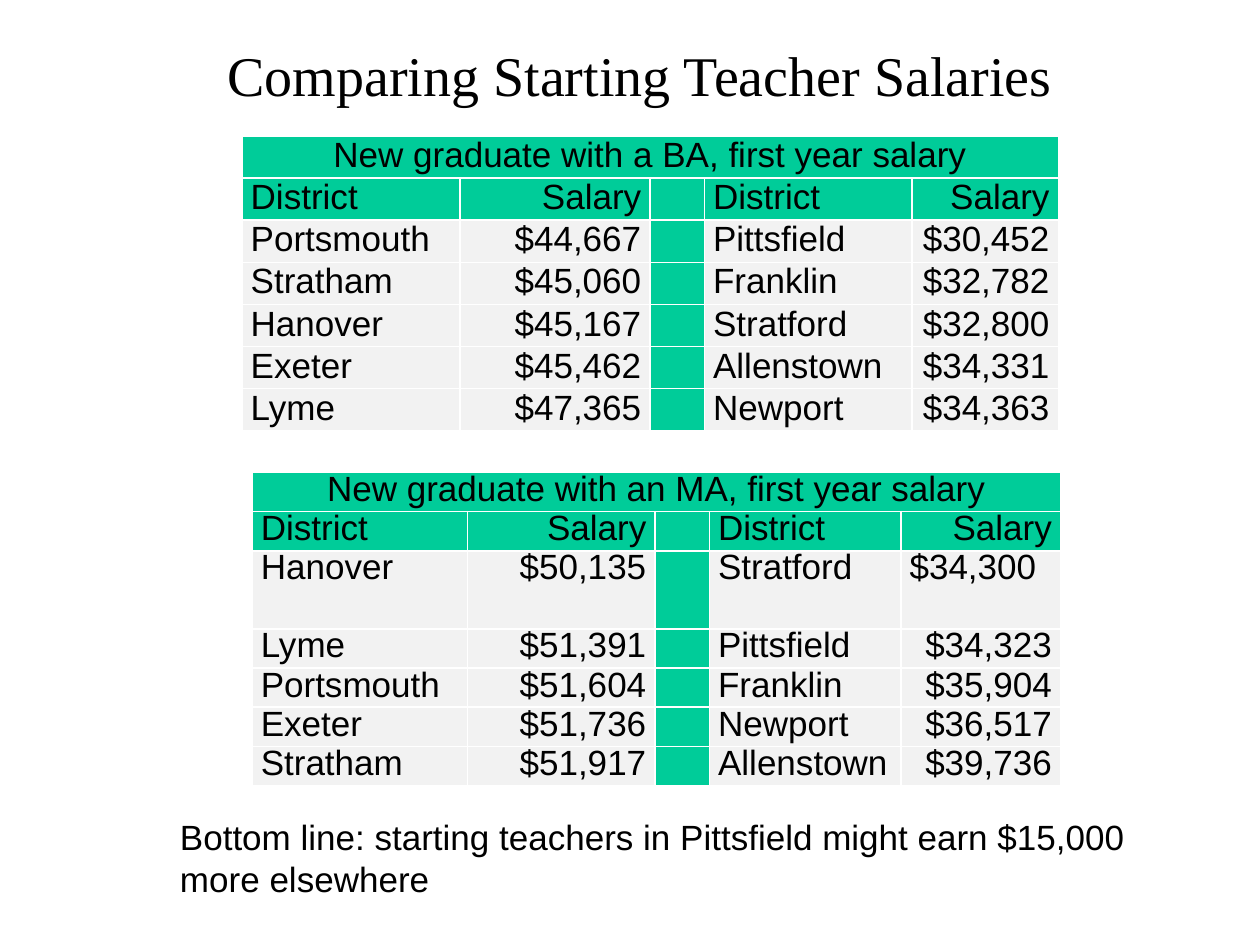
from lxml import etree
from pptx import Presentation
from pptx.dml.color import RGBColor
from pptx.enum import text
from pptx.oxml import ns
from pptx.util import Inches, Pt

COLORS = {"ink": "000000", "header": "00CC99", "body": "F2F2F2", "rule": "FFFFFF"}
LEFT, CENTER, RIGHT = text.PP_ALIGN.LEFT, text.PP_ALIGN.CENTER, text.PP_ALIGN.RIGHT
GUTTER = 2
HEADINGS = ("District", "Salary", "", "District", "Salary")

BA_ROWS = [
    ("Portsmouth", "$44,667", "", "Pittsfield", "$30,452"),
    ("Stratham", "$45,060", "", "Franklin", "$32,782"),
    ("Hanover", "$45,167", "", "Stratford", "$32,800"),
    ("Exeter", "$45,462", "", "Allenstown", "$34,331"),
    ("Lyme", "$47,365", "", "Newport", "$34,363"),
]
MA_ROWS = [
    ("Hanover", "$50,135", "", "Stratford", "$34,300"),
    ("Lyme", "$51,391", "", "Pittsfield", "$34,323"),
    ("Portsmouth", "$51,604", "", "Franklin", "$35,904"),
    ("Exeter", "$51,736", "", "Newport", "$36,517"),
    ("Stratham", "$51,917", "", "Allenstown", "$39,736"),
]


def write(tf, words, size=20, font="Arial", align=LEFT, spacing=None):
    p = tf.paragraphs[0]
    p.alignment = align
    p.line_spacing = spacing
    if words:
        r = p.add_run()
        r.text = words
        r.font.size = Pt(size)
        r.font.name = font
        r.font.color.rgb = RGBColor.from_string(COLORS["ink"])


def add_text(s, left, top, width, height, words, anchor=text.MSO_ANCHOR.TOP, **fmt):
    sp = s.shapes.add_textbox(Inches(left), Inches(top), Inches(width), Inches(height))
    tf = sp.text_frame
    tf.word_wrap = True
    tf.vertical_anchor = anchor
    write(tf, words, **fmt)


def style_cell(cell, color):
    """Fill the cell, set its margins and rule all four sides."""
    cell.fill.solid()
    cell.fill.fore_color.rgb = RGBColor.from_string(COLORS[color])
    cell.margin_left = cell.margin_right = Inches(0.07)
    cell.margin_top = cell.margin_bottom = 0
    tc_pr = cell._tc.get_or_add_tcPr()
    for i, side in enumerate(("lnL", "lnR", "lnT", "lnB")):
        ln = etree.Element(ns.qn(f"a:{side}"), w=str(Pt(1)))
        fill = etree.SubElement(ln, ns.qn("a:solidFill"))
        etree.SubElement(fill, ns.qn("a:srgbClr"), val=COLORS["rule"])
        tc_pr.insert(i, ln)


def add_salary_table(s, left, top, widths, heights, title, rows, spacing=None):
    grid = [(title, "", "", "", ""), HEADINGS, *rows]
    frame = s.shapes.add_table(len(grid), len(widths), Inches(left), Inches(top),
                               Inches(sum(widths)), Inches(sum(heights)))
    table = frame.table
    for column, width in zip(table.columns, widths):
        column.width = Inches(width)
    for row, height in zip(table.rows, heights):
        row.height = Inches(height)
    table.cell(0, 0).merge(table.cell(0, len(widths) - 1))
    for i, values in enumerate(grid):
        for j, value in enumerate(values):
            cell = table.cell(i, j)
            style_cell(cell, "header" if i < 2 or j == GUTTER else "body")
            align = CENTER if i == 0 else RIGHT if j in (1, 4) else LEFT
            write(cell.text_frame, value, align=align, spacing=spacing)
    return table


def main():
    prs = Presentation()
    prs.slide_width, prs.slide_height = Inches(10), Inches(7.5)
    s = prs.slides.add_slide(prs.slide_layouts[6])

    add_text(s, 0.83, 0.17, 8.5, 0.84, "Comparing Starting Teacher Salaries",
             anchor=text.MSO_ANCHOR.MIDDLE, size=32, font="Times New Roman", align=CENTER)
    add_salary_table(s, 1.92, 1.08, (1.73, 1.51, 0.43, 1.65, 1.16), [1 / 3] * 7,
                     "New graduate with a BA, first year salary", BA_ROWS)
    ma = add_salary_table(s, 2, 3.75, (1.71, 1.49, 0.43, 1.52, 1.27),
                          [0.31, 0.31, 0.62] + [0.31] * 4,
                          "New graduate with an MA, first year salary", MA_ROWS, spacing=0.93)
    ma.cell(2, 4).text_frame.paragraphs[0].alignment = LEFT
    add_text(s, 1.33, 6.42, 7.75, 0.77,
             "Bottom line: starting teachers in Pittsfield might earn $15,000 more elsewhere")

    prs.save("out.pptx")


if __name__ == "__main__":
    main()
